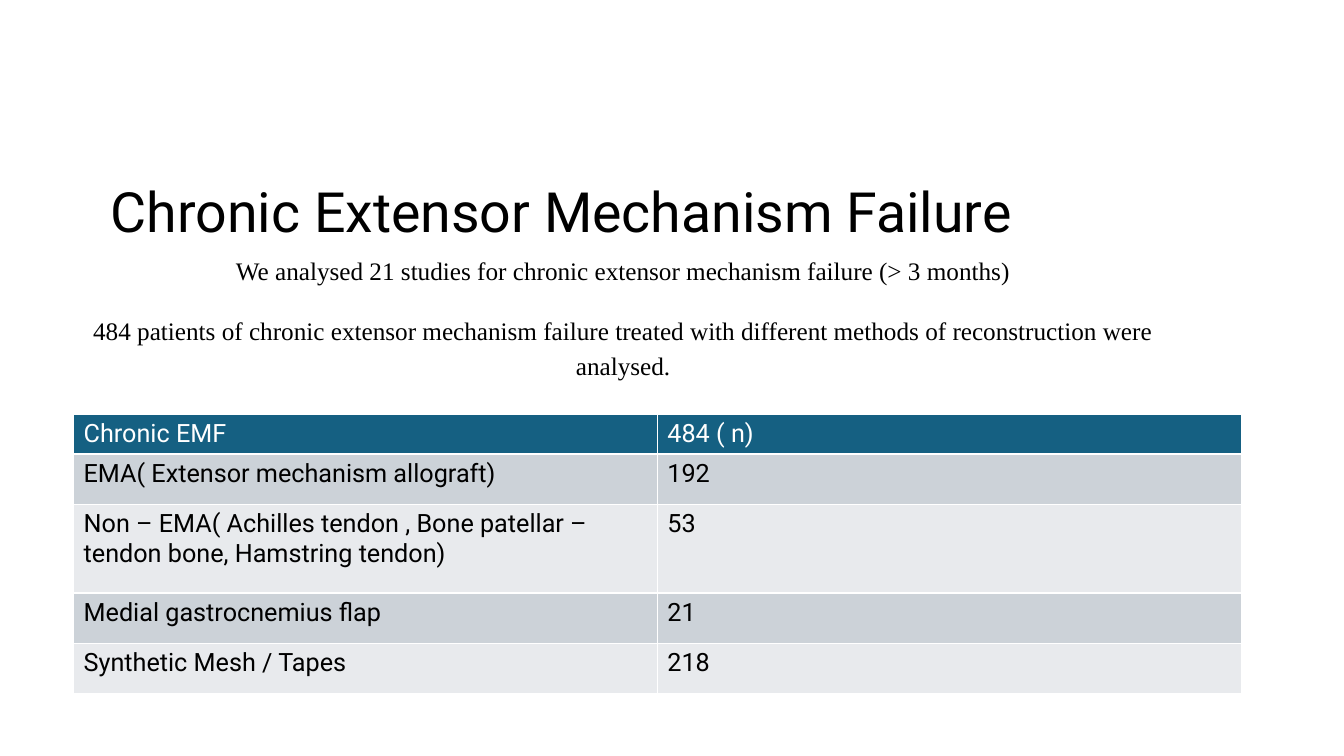
from dataclasses import dataclass

from lxml.etree import SubElement
from pptx import Presentation
from pptx.dml.color import RGBColor
from pptx.enum.text import MSO_ANCHOR, MSO_AUTO_SIZE, PP_ALIGN
from pptx.oxml.ns import qn
from pptx.util import Inches, Pt

# Content
TITLE = "Chronic Extensor Mechanism Failure"
FINDINGS = [
    "We analysed 21 studies for chronic extensor mechanism failure (> 3 months)",
    "484 patients of chronic extensor mechanism failure treated with different "
    "methods of reconstruction were analysed.",
]
PATIENTS = [
    ("Chronic EMF", "484 ( n)"),
    ("EMA( Extensor mechanism allograft)", "192"),
    ("Non – EMA( Achilles tendon , Bone patellar –tendon bone, Hamstring tendon)", "53"),
    ("Medial gastrocnemius flap", "21"),
    ("Synthetic Mesh / Tapes", "218"),
]
ROW_HEIGHTS = [0.39, 0.5, 0.88, 0.5, 0.5]
COLUMN_WIDTH = 5.79


@dataclass(frozen=True)
class Theme:
    text: str = "000000"
    light: str = "FFFFFF"
    header: str = "156082"
    bands: tuple = ("CCD2D8", "E8EAED")
    sans: str = "Roboto"
    serif: str = "Times New Roman"
    title_size: float = 39.6
    body_size: float = 18
    border: float = 1


THEME = Theme()


def write(paragraph, text, *, font=THEME.sans, size=THEME.body_size, color=THEME.text,
          align=PP_ALIGN.LEFT, spacing=1.0, before=0, after=0):
    paragraph.alignment = align
    paragraph.line_spacing = spacing
    paragraph.space_before = Pt(before)
    paragraph.space_after = Pt(after)
    run = paragraph.add_run()
    run.text = text
    run.font.name = font
    run.font.size = Pt(size)
    run.font.color.rgb = RGBColor.from_string(color)


def place(shape, left, top, width, height, anchor):
    shape.left, shape.top = Inches(left), Inches(top)
    shape.width, shape.height = Inches(width), Inches(height)
    frame = shape.text_frame
    frame.word_wrap = True
    frame.auto_size = MSO_AUTO_SIZE.NONE
    frame.vertical_anchor = anchor
    return frame


def remove_bullet(paragraph):
    properties = paragraph._p.get_or_add_pPr()
    properties.set("marL", "0")
    properties.set("indent", "0")
    SubElement(properties, qn("a:buNone"))


def add_borders(cell):
    properties = cell._tc.get_or_add_tcPr()
    for side in ("lnL", "lnR", "lnT", "lnB"):
        line = SubElement(properties, qn(f"a:{side}"), w=str(int(Pt(THEME.border))))
        fill = SubElement(line, qn("a:solidFill"))
        SubElement(fill, qn("a:srgbClr"), val=THEME.light)


def main():
    presentation = Presentation()
    presentation.slide_width, presentation.slide_height = Inches(13.33), Inches(7.5)
    slide = presentation.slides.add_slide(presentation.slide_layouts[1])

    # Title
    frame = place(slide.shapes.title, 1, 1.78, 11.86, 0.69, MSO_ANCHOR.MIDDLE)
    write(frame.paragraphs[0], TITLE, size=THEME.title_size, spacing=0.9)

    # Findings
    frame = place(slide.placeholders[1], 0.52, 2.44, 11.32, 2.89, MSO_ANCHOR.TOP)
    for index, finding in enumerate(FINDINGS):
        paragraph = frame.add_paragraph() if index else frame.paragraphs[0]
        remove_bullet(paragraph)
        write(paragraph, finding, font=THEME.serif, align=PP_ALIGN.CENTER,
              spacing=1.15, before=10 if index else 0, after=8)

    # Patient table
    columns = len(PATIENTS[0])
    table = slide.shapes.add_table(
        len(PATIENTS), columns, Inches(0.73), Inches(4.11),
        Inches(COLUMN_WIDTH * columns), Inches(sum(ROW_HEIGHTS))).table
    for column in table.columns:
        column.width = Inches(COLUMN_WIDTH)
    for row_index, (values, height) in enumerate(zip(PATIENTS, ROW_HEIGHTS)):
        table.rows[row_index].height = Inches(height)
        is_header = row_index == 0
        background = THEME.header if is_header else THEME.bands[(row_index - 1) % 2]
        for column_index, value in enumerate(values):
            cell = table.cell(row_index, column_index)
            add_borders(cell)
            cell.fill.solid()
            cell.fill.fore_color.rgb = RGBColor.from_string(background)
            paragraph = cell.text_frame.paragraphs[0]
            paragraph.font.bold = False
            write(paragraph, value, color=THEME.light if is_header else THEME.text)
            paragraph.runs[0].font.bold = False

    presentation.save("out.pptx")


if __name__ == "__main__":
    main()
